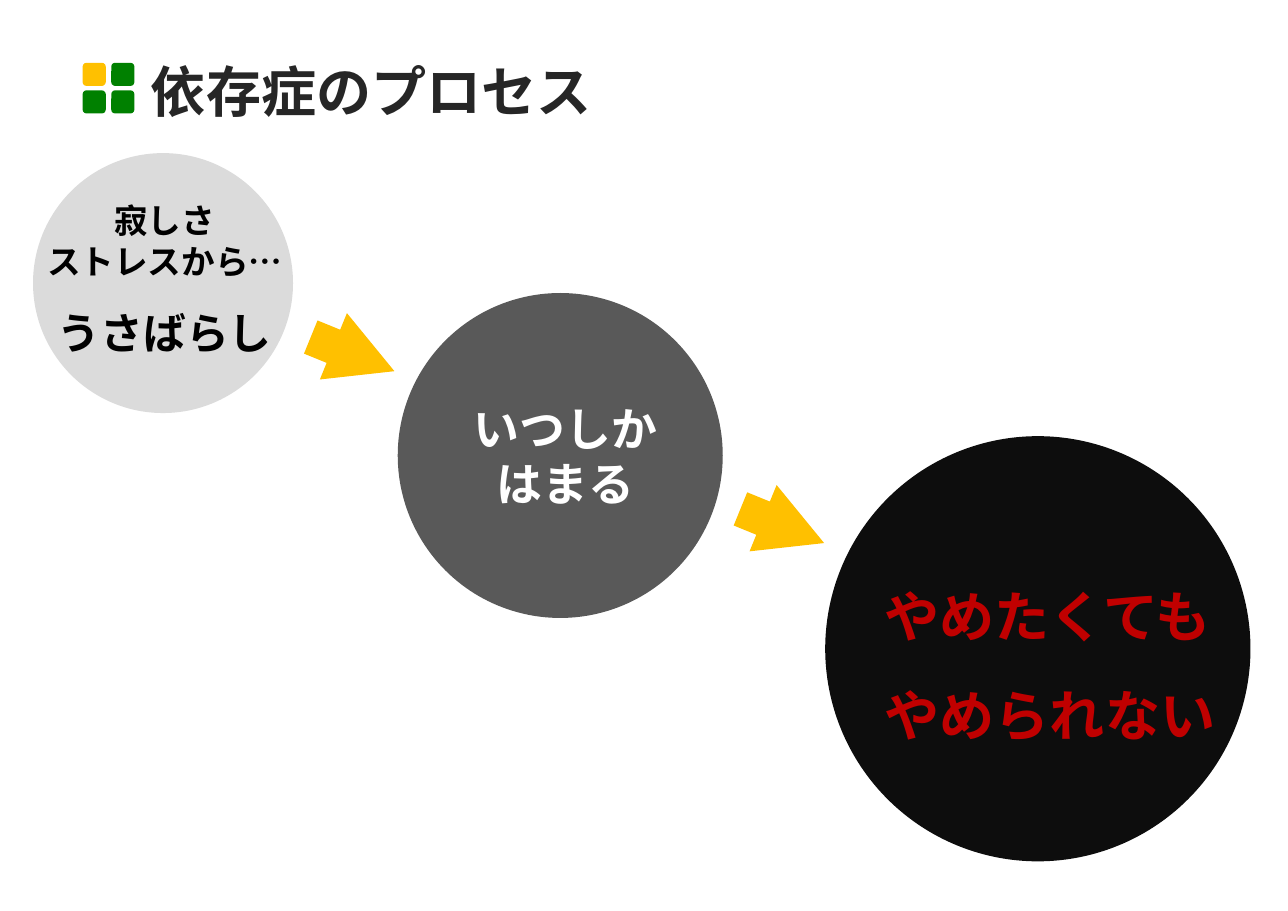
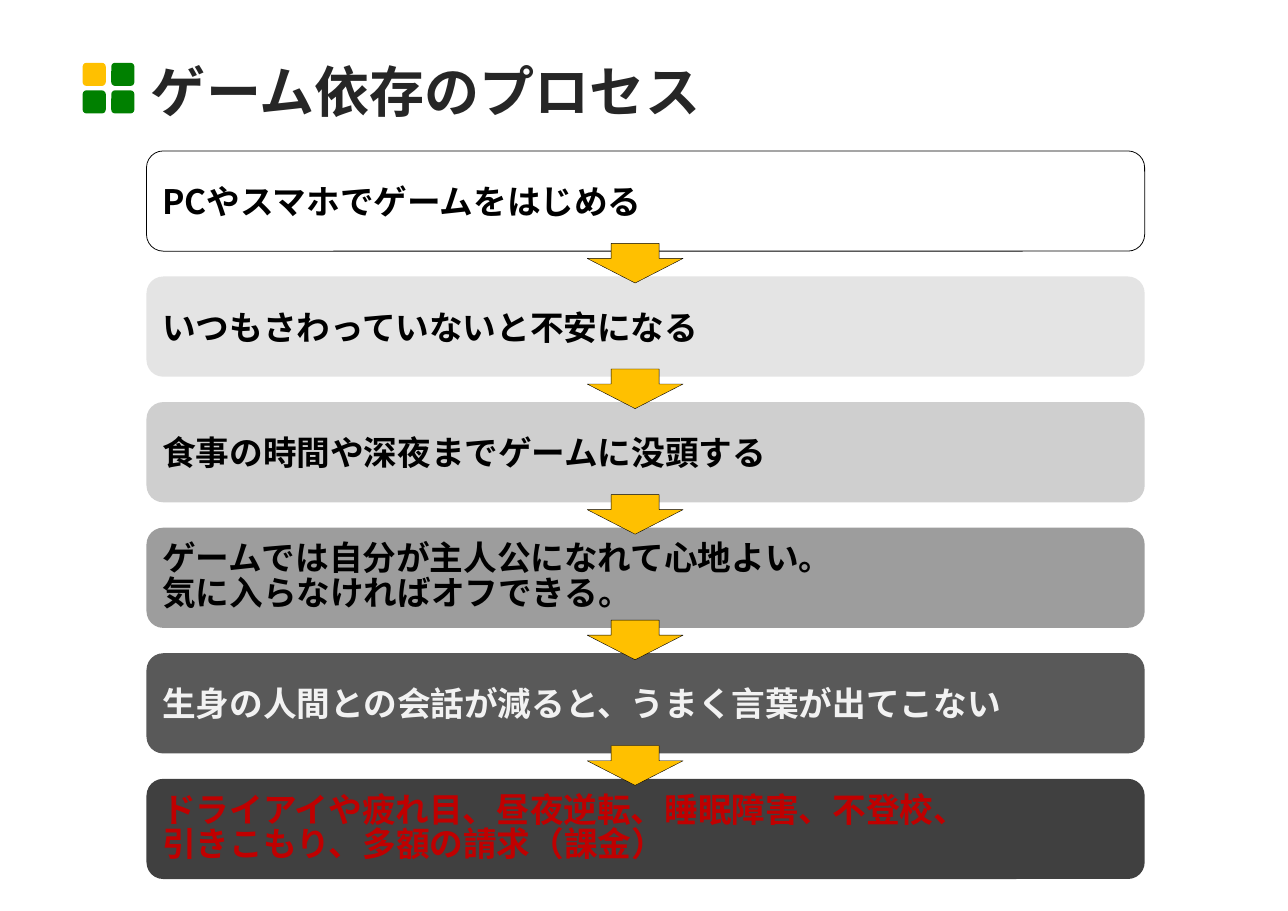
from lxml import etree
from pptx import Presentation
from pptx.dml.color import RGBColor
from pptx.enum.shapes import MSO_SHAPE as SHAPE
from pptx.enum.text import MSO_ANCHOR as ANCHOR, MSO_AUTO_SIZE as AUTO_SIZE, PP_ALIGN as ALIGN
from pptx.oxml.ns import qn
from pptx.util import Inches, Pt

FONT = "Noto Sans CJK JP"
BLACK = RGBColor(0x00, 0x00, 0x00)
WHITE = RGBColor(0xFF, 0xFF, 0xFF)
OFF_WHITE = RGBColor(0xF2, 0xF2, 0xF2)
TITLE_GRAY = RGBColor(0x26, 0x26, 0x26)
PALE_GRAY = RGBColor(0xDB, 0xDB, 0xDB)
MID_GRAY = RGBColor(0x59, 0x59, 0x59)
NEAR_BLACK = RGBColor(0x0D, 0x0D, 0x0D)
AMBER = RGBColor(0xFF, 0xC0, 0x00)
GREEN = RGBColor(0x00, 0x80, 0x00)
RED = RGBColor(0xC0, 0x00, 0x00)

ADDICTION_TITLE = "依存症のプロセス"
# circle: left, top, diameter; label: own text box, or None for text in the circle
# lines: text, size, line spacing
STAGES = [
    dict(circle=(0.3, 1.39, 2.36), fill=PALE_GRAY, label=(0.38, 1.56, 2.23, 1.95),
         lines=[("寂しさ", 22, 1), ("ストレスから…", 22, 1), ("うさばらし", 28, 1.5)],
         style=dict(font="Arial", color=BLACK, align=ALIGN.CENTER)),
    dict(circle=(3.61, 2.66, 2.95), fill=MID_GRAY, label=None,
         lines=[("いつしか", 30, 1), ("はまる", 30, 1)],
         style=dict(color=WHITE, align=ALIGN.CENTER, insets=(0.1, 0))),
    dict(circle=(7.49, 3.96, 3.86), fill=NEAR_BLACK, label=(8.03, 5.06, 3.17, 1.66),
         lines=[("やめたくても", 36, 1.5), ("やめられない", 36, 1.5)],
         style=dict(color=RED)),
]
STAGE_ARROWS = [(2.79, 2.89), (6.69, 4.45)]

GAME_TITLE = "ゲーム依存のプロセス"
# text, fill, text colour
STEPS = [
    ("PCやスマホでゲームをはじめる", None, BLACK),
    ("いつもさわっていないと不安になる", RGBColor(0xE4, 0xE4, 0xE4), BLACK),
    ("食事の時間や深夜までゲームに没頭する", RGBColor(0xCF, 0xCF, 0xCF), BLACK),
    ("ゲームでは自分が主人公になれて心地よい。\n気に入らなければオフできる。",
     RGBColor(0x9D, 0x9D, 0x9D), BLACK),
    ("生身の人間との会話が減ると、うまく言葉が出てこない", MID_GRAY, OFF_WHITE),
    ("ドライアイや疲れ目、昼夜逆転、睡眠障害、不登校、\n引きこもり、多額の請求（課金）",
     RGBColor(0x40, 0x40, 0x40), RED),
]
STEP_LEFT, STEP_TOP, STEP_W, STEP_H, STEP_PITCH = 1.33, 1.37, 9.06, 0.91, 1.14
# Two-line steps are set tighter so that their text stays clear of the arrows
TWO_LINE_SPACING = 0.85
ARROW_LEFT, ARROW_W, ARROW_H, ARROW_OVERLAP = 5.33, 0.87, 0.36, 0.07


def add_shape(shapes, kind, box, fill=None, line=None, line_width=0.5):
    s = shapes.add_shape(kind, *map(Inches, box))
    s.shadow.inherit = False
    if fill is None:
        s.fill.background()
    else:
        s.fill.solid()
        s.fill.fore_color.rgb = fill
    if line is None:
        s.line.fill.background()
    else:
        s.line.color.rgb = line
        s.line.width = Pt(line_width)
    return s


def write(s, lines, color=BLACK, font=FONT, align=ALIGN.LEFT, insets=(0.1, 0.1)):
    """Fill a shape with bold paragraphs given as (text, size, line spacing)."""
    tf = s.text_frame
    tf.word_wrap = True
    tf.auto_size = AUTO_SIZE.NONE
    tf.vertical_anchor = ANCHOR.MIDDLE
    tf.margin_left, tf.margin_right = map(Inches, insets)
    for i, (text, size, spacing) in enumerate(lines):
        p = tf.add_paragraph() if i else tf.paragraphs[0]
        p.alignment = align
        p.line_spacing = spacing
        for j, part in enumerate(text.split("\n")):
            if j:
                p.add_line_break()
            r = p.add_run()
            r.text = part
            r.font.name, r.font.size, r.font.bold = font, Pt(size), True
            r.font.color.rgb = color
            east_asian = etree.SubElement(r.font._element, qn("a:ea"))
            east_asian.set("typeface", FONT)


def add_titled_slide(prs, title):
    """Add a slide with the four-square mark and the shared title style."""
    slide = prs.slides.add_slide(prs.slide_layouts[5])
    mark = slide.shapes.add_group_shape()
    for i, fill in enumerate((AMBER, GREEN, GREEN, GREEN)):
        row, col = divmod(i, 2)
        box = (0.75 + 0.26 * col, 0.57 + 0.25 * row, 0.21, 0.21)
        add_shape(mark.shapes, SHAPE.ROUNDED_RECTANGLE, box, fill)
    write(slide.shapes.title, [(title, 36, 1)], color=TITLE_GRAY)
    return slide


def build_addiction_slide(prs):
    shapes = add_titled_slide(prs, ADDICTION_TITLE).shapes
    for stage in STAGES:
        left, top, size = stage["circle"]
        s = add_shape(shapes, SHAPE.OVAL, (left, top, size, size), stage["fill"])
        if stage["label"]:
            s = shapes.add_textbox(*map(Inches, stage["label"]))
        write(s, stage["lines"], **{"insets": (0, 0), **stage["style"]})
    for left, top in STAGE_ARROWS:
        s = add_shape(shapes, SHAPE.RIGHT_ARROW, (left, top, 0.82, 0.65), AMBER)
        s.adjustments[1] = 0.92
        s.rotation = 22.2


def build_game_slide(prs):
    shapes = add_titled_slide(prs, GAME_TITLE).shapes
    tops = [STEP_TOP + STEP_PITCH * i for i in range(len(STEPS))]
    for top, (text, fill, color) in zip(tops, STEPS):
        s = add_shape(shapes, SHAPE.ROUNDED_RECTANGLE, (STEP_LEFT, top, STEP_W, STEP_H),
                      fill, line=None if fill else BLACK)
        write(s, [(text, 22, TWO_LINE_SPACING if "\n" in text else 1)], color=color)
    for top in tops[:-1]:
        box = (ARROW_LEFT, top + STEP_H - ARROW_OVERLAP, ARROW_W, ARROW_H)
        s = add_shape(shapes, SHAPE.DOWN_ARROW, box, AMBER, line=BLACK, line_width=0.25)
        s.adjustments[1] = 0.62


def main():
    prs = Presentation()
    prs.slide_width, prs.slide_height = Inches(11.69), Inches(8.27)
    title = prs.slide_layouts[5].placeholders[0]
    title.left, title.top = Inches(1.27), Inches(0.48)
    title.width, title.height = Inches(9.92), Inches(0.68)
    build_addiction_slide(prs)
    build_game_slide(prs)
    prs.save("out.pptx")


if __name__ == "__main__":
    main()
